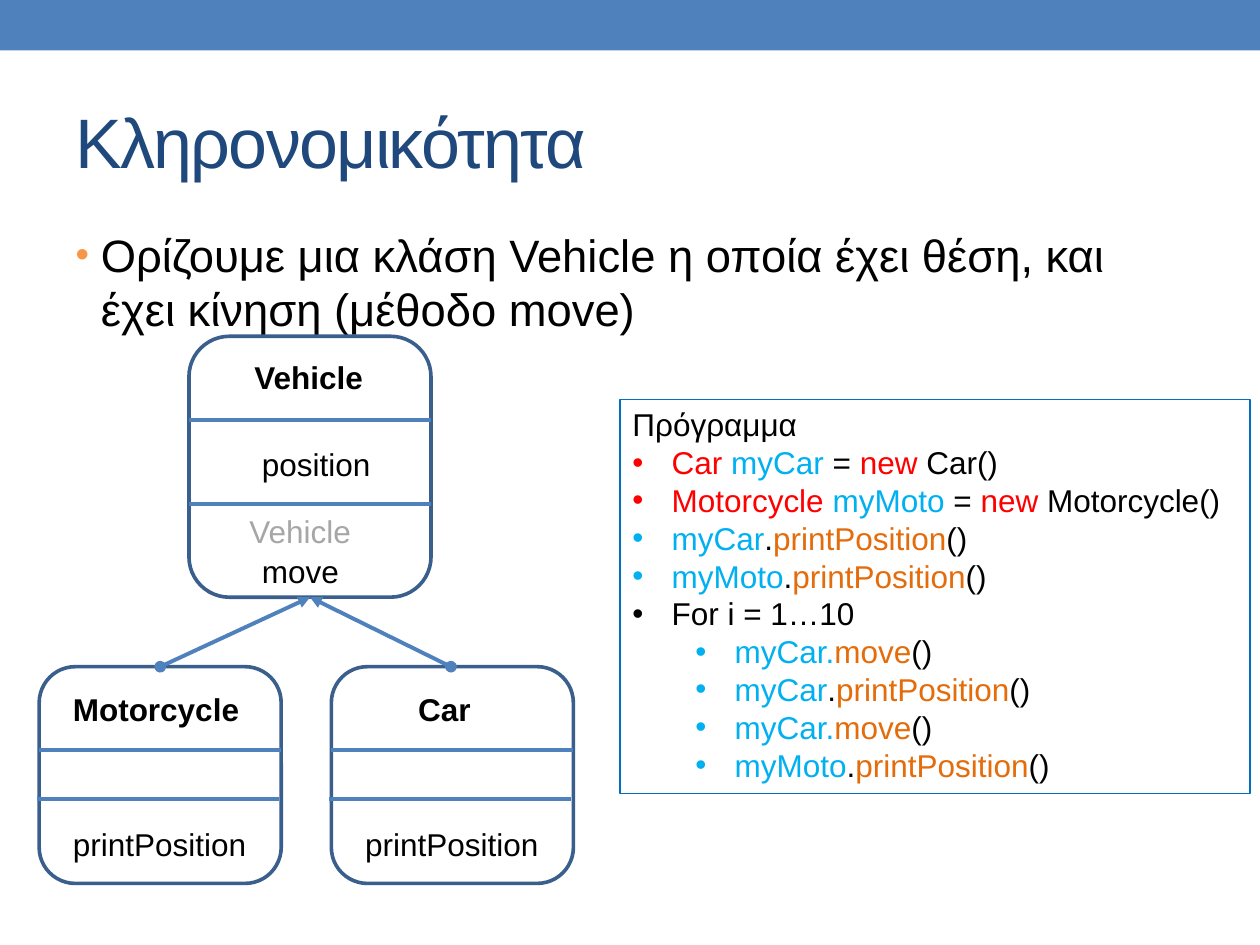
"""Build a slide on inheritance with a class diagram and a short program."""
import pptx
import pptx.dml.color
import pptx.enum.shapes
import pptx.enum.text
import pptx.oxml
import pptx.oxml.ns
import pptx.util

Cm = pptx.util.Cm
Pt = pptx.util.Pt
SHAPES = pptx.enum.shapes.MSO_SHAPE
ALIGN = pptx.enum.text.PP_ALIGN
ANCHOR = pptx.enum.text.MSO_ANCHOR
AUTO_SIZE = pptx.enum.text.MSO_AUTO_SIZE

COLORS = {
    "bar": "4F81BD", "title": "1F497D", "text": "000000", "muted": "A6A6A6",
    "outline": "3A5F8C", "frame": "0070C0", "bullet": "F79646",
    "keyword": "FF0000", "variable": "00B0F0", "method": "E46C0A",
}
COLORS = {name: pptx.dml.color.RGBColor.from_string(value) for name, value in COLORS.items()}


def add_run(paragraph, text, color="text", size=18, bold=False):
    run = paragraph.add_run()
    run.text = text
    for name, value in {"name": "Arial", "size": Pt(size), "bold": bold}.items():
        setattr(run.font, name, value)
    run.font.color.rgb = COLORS[color]
    return run


def add_line(shapes, start, end, ends=()):
    line = shapes.add_connector(
        pptx.enum.shapes.MSO_CONNECTOR.STRAIGHT, *[Cm(value) for value in (*start, *end)])
    line.line.color.rgb = COLORS["bar"]
    line.line.width = Pt(2.25)
    properties = line.element.spPr
    for tag, kind in ends:
        end_mark = pptx.oxml.parse_xml(f'<a:{tag} {pptx.oxml.ns.nsdecls("a")} type="{kind}"/>')
        properties.find(pptx.oxml.ns.qn("a:ln")).append(end_mark)
    properties.append(pptx.oxml.parse_xml(f'<a:effectLst {pptx.oxml.ns.nsdecls("a")}/>'))


presentation = pptx.Presentation()
presentation.slide_width, presentation.slide_height = Cm(25.4), Cm(19.05)
slide = presentation.slides.add_slide(presentation.slide_layouts[1])
shapes = slide.shapes

bar = shapes.add_shape(SHAPES.RECTANGLE, 0, 0, Cm(25.4), Cm(1.02))
bar.shadow.inherit = False
bar.fill.solid()
bar.fill.fore_color.rgb = COLORS["bar"]
bar.line.fill.background()

title, body = shapes.title, slide.placeholders[1]
for placeholder, top, height, anchor in (
    (title, 1.47, 2.74, ANCHOR.MIDDLE),
    (body, 4.45, 2.34, ANCHOR.TOP),
):
    geometry = {"left": Cm(1.27), "top": Cm(top), "width": Cm(22.86), "height": Cm(height)}
    for name, value in geometry.items():
        setattr(placeholder, name, value)
    frame_format = {"auto_size": AUTO_SIZE.NONE, "word_wrap": True, "vertical_anchor": anchor}
    for name, value in frame_format.items():
        setattr(placeholder.text_frame, name, value)
    placeholder.text_frame.paragraphs[0].alignment = ALIGN.LEFT

heading = add_run(title.text_frame.paragraphs[0], "Κληρονομικότητα", "title", 40)
heading.font._element.set("spc", "-100")
definition = body.text_frame.paragraphs[0]
definition.space_before = Pt(5)
add_run(definition, "Ορίζουμε μια κλάση Vehicle η οποία έχει θέση, και έχει κίνηση (μέθοδο move)",
        size=25.9)

program = shapes.add_shape(SHAPES.RECTANGLE, Cm(12.5), Cm(8.05), Cm(12.7), Cm(7.95))
program.shadow.inherit = False
program.fill.background()
program.line.color.rgb = COLORS["frame"]
program.line.width = Pt(0.75)
program.text_frame.word_wrap = True
program.text_frame.vertical_anchor = ANCHOR.TOP
program_title = program.text_frame.paragraphs[0]
program_title.alignment = ALIGN.LEFT
add_run(program_title, "Πρόγραμμα")

TOKEN_COLORS = {
    "Car ": "keyword", "Motorcycle ": "keyword", "new": "keyword",
    "myCar ": "variable", "myMoto ": "variable", "myCar": "variable",
    "myMoto": "variable", "myCar.": "variable",
    "printPosition": "method", "move": "method",
}
CODE = [
    (0, "Car |myCar |= |new| Car()"),
    (0, "Motorcycle |myMoto |= |new| Motorcycle()"),
    (0, "myCar|.|printPosition|()"),
    (0, "myMoto|.|printPosition|()"),
    (0, "For i = 1…10"),
    (1, "myCar.|move|()"),
    (1, "myCar|.|printPosition|()"),
    (1, "myCar.|move|()"),
    (1, "myMoto|.|printPosition|()"),
]
bulleted = [(definition, 0.51, 0.51, "bullet", 85)]
for level, statement in CODE:
    paragraph = program.text_frame.add_paragraph()
    paragraph.level = level
    paragraph.alignment = ALIGN.LEFT
    tokens = statement.split("|")
    for token in tokens:
        add_run(paragraph, token, TOKEN_COLORS.get(token, "text"))
    color = TOKEN_COLORS.get(tokens[0], "text")
    bulleted.append((paragraph, 0.79 + 1.27 * level, 0.79, color, 100))

for paragraph, margin, hanging, color, percent in bulleted:
    properties = paragraph._p.get_or_add_pPr()
    properties.set("marL", str(Cm(margin)))
    properties.set("indent", str(-Cm(hanging)))
    for markup in (
        f'<a:buClr {{}}><a:srgbClr val="{COLORS[color]}"/></a:buClr>',
        f'<a:buSzPct {{}} val="{percent * 1000}"/>',
        '<a:buFont {} typeface="Arial"/>',
        '<a:buChar {} char="•"/>',
    ):
        properties.append(pptx.oxml.parse_xml(markup.format(pptx.oxml.ns.nsdecls("a"))))

CLASS_WIDTH = 4.88
CLASSES = [
    (6.68, 13.44, 4.37, ((0, 15.11), (-0.05, 16.1)), [
        ("Car", 8.18, 13.79, 1.57, "text", True),
        ("printPosition", 7.11, 16.51, 4.04, "text", False)]),
    (3.81, 6.78, 5.26, ((0, 8.46), (0, 10.16)), [
        ("Vehicle", 4.88, 7.09, 2.72, "text", True),
        ("position", 5.03, 8.84, 2.72, "text", False),
        ("move", 5.03, 11, 2.08, "text", False),
        ("Vehicle", 4.78, 10.19, 2.59, "muted", False)]),
    (0.79, 13.44, 4.37, ((0, 15.11), (-0.05, 16.1)), [
        ("Motorcycle", 1.22, 13.79, 3.89, "text", True),
        ("printPosition", 1.22, 16.51, 4.04, "text", False)]),
]
for left, top, height, dividers, labels in CLASSES:
    box = shapes.add_shape(
        SHAPES.ROUNDED_RECTANGLE, Cm(left), Cm(top), Cm(CLASS_WIDTH), Cm(height))
    box.shadow.inherit = False
    box.fill.background()
    box.line.color.rgb = COLORS["outline"]
    box.line.width = Pt(2.08)
    for shift, y in dividers:
        add_line(shapes, (left + shift, y), (left + shift + CLASS_WIDTH, y))
    for text, label_left, label_top, width, color, bold in labels:
        label = shapes.add_textbox(Cm(label_left), Cm(label_top), Cm(width), Cm(1.02))
        for name, value in {"word_wrap": False, "auto_size": AUTO_SIZE.SHAPE_TO_FIT_TEXT}.items():
            setattr(label.text_frame, name, value)
        add_run(label.text_frame.paragraphs[0], text, color, bold=bold)

for child_x in (3.23, 9.09):
    add_line(shapes, (child_x, 13.44), (6.25, 12.04),
             (("headEnd", "oval"), ("tailEnd", "triangle")))

presentation.save("out.pptx")
